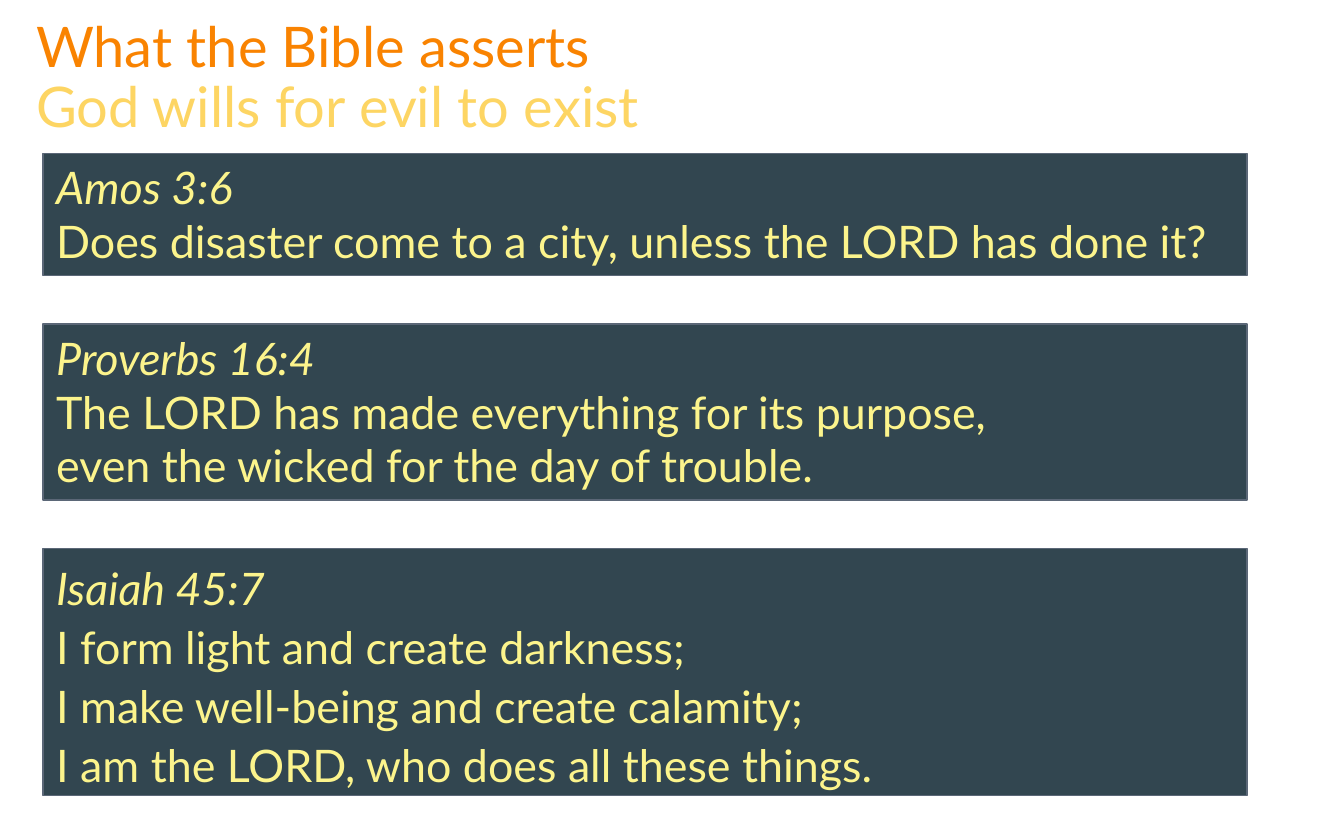
from pptx import Presentation, util as u
from pptx.dml.color import RGBColor
from pptx.enum import shapes, text

VERSES = [
    # reference, lines, box height, line spacing
    ("Amos 3:6",
     ["Does disaster come to a city, unless the LORD has done it?"], 0.91, 1.0),
    ("Proverbs 16:4",
     ["The LORD has made everything for its purpose,",
      "even the wicked for the day of trouble."], 1.31, 1.0),
    ("Isaiah 45:7",
     ["I form light and create darkness;",
      "I make well-being and create calamity;",
      "I am the LORD, who does all these things."], 1.84, 1.1),
]


def colour(value):
    return RGBColor.from_string(value)


class VerseSlide:
    """Holds the style and the current slide."""

    font_name = "Lato"
    box_fill, box_line, verse_colour = "324650", "5B6777", "FCF48C"

    def __init__(self, presentation):
        self.slide = presentation.slides.add_slide(presentation.slide_layouts[6])

    def format_frame(self, frame, **values):
        for name, value in {"word_wrap": True, **values}.items():
            setattr(frame, name, value)

    def add_run(self, paragraph, content, size, hex_colour, italic=False):
        run = paragraph.add_run()
        run.text = content
        values = {"name": self.font_name, "size": u.Pt(size), "italic": italic}
        for name, value in values.items():
            setattr(run.font, name, value)
        run.font.color.rgb = colour(hex_colour)

    def title(self, position, lines):
        shape = self.slide.shapes.add_textbox(*map(u.Inches, position))
        frame = shape.text_frame
        self.format_frame(frame, vertical_anchor=text.MSO_ANCHOR.MIDDLE)
        paragraph = frame.paragraphs[0]
        paragraph.line_spacing = 0.9
        for index, (content, hex_colour) in enumerate(lines):
            if index:
                paragraph.add_line_break()
            self.add_run(paragraph, content, 30, hex_colour)

    def verse_box(self, position, reference, lines, spacing):
        shape = self.slide.shapes.add_shape(
            shapes.MSO_SHAPE.RECTANGLE, *map(u.Inches, position))
        shape.shadow.inherit = False
        shape.fill.solid()
        shape.fill.fore_color.rgb = colour(self.box_fill)
        shape.line.color.rgb = colour(self.box_line)
        shape.line.width = u.Pt(0.75)
        frame = shape.text_frame
        self.format_frame(frame, vertical_anchor=text.MSO_ANCHOR.TOP,
                          auto_size=text.MSO_AUTO_SIZE.SHAPE_TO_FIT_TEXT)
        for index, content in enumerate([reference, *lines]):
            paragraph = frame.add_paragraph() if index else frame.paragraphs[0]
            paragraph.alignment = text.PP_ALIGN.LEFT
            paragraph.line_spacing = spacing
            self.add_run(paragraph, content, 24, self.verse_colour, italic=index == 0)


def main():
    presentation = Presentation()
    presentation.slide_width = u.Inches(10)
    presentation.slide_height = u.Inches(6.25)
    page = VerseSlide(presentation)

    # Two-tone heading
    page.title((0.17, 0.08, 9.65, 1.02),
               [("What the Bible asserts", "F98301"),
                ("God wills for evil to exist", "FDD563")])

    # Verse boxes, stacked with equal gaps
    top, gap = 1.14, 0.36
    for reference, lines, height, spacing in VERSES:
        page.verse_box((0.32, top, 8.96, height), reference, lines, spacing)
        top += height + gap

    presentation.save("out.pptx")


if __name__ == "__main__":
    main()
